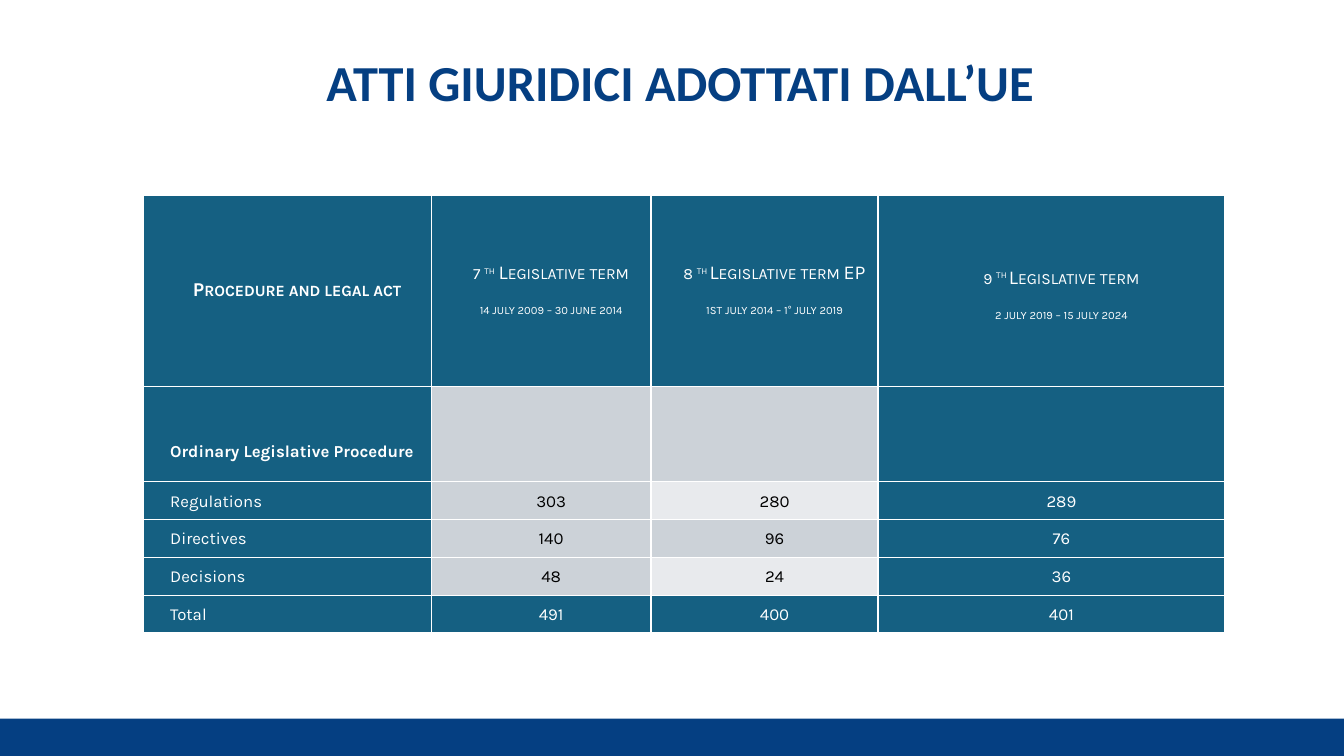
from lxml.etree import SubElement
from pptx import Presentation
from pptx.dml.color import RGBColor
from pptx.enum.shapes import MSO_SHAPE
from pptx.enum.text import MSO_ANCHOR, PP_ALIGN
from pptx.oxml.ns import qn
from pptx.util import Pt

NAVY = RGBColor(0x05, 0x3F, 0x82)
TEAL = RGBColor(0x15, 0x60, 0x82)
GREY = RGBColor(0xCC, 0xD2, 0xD8)
PALE = RGBColor(0xE8, 0xEA, 0xED)
WHITE = RGBColor(0xFF, 0xFF, 0xFF)
BLACK = RGBColor(0, 0, 0)

COLUMN_WIDTHS = (205.8, 157, 162.2, 247.6)
ROW_HEIGHTS = (136.6, 67.9, 27, 27, 27, 27)
TERMS = (
    ("7 ", "th", " Legislative term", "14 july 2009 – 30 june 2014", 0),
    ("8 ", "th ", "Legislative term EP", "1st july 2014 – 1° july 2019", 0),
    ("9 ", "th ", "Legislative term", "2 july 2019 – 15 july 2024", 6),
)
ACTS = (
    ("Regulations", 303, 280, 289),
    ("Directives", 140, 96, 76),
    ("Decisions", 48, 24, 36),
    ("Total", 491, 400, 401),
)


class SlideBuilder:
    title_font = "Calibri"
    table_font = "Karla"

    def __init__(self, slide):
        self.slide = slide

    def bar(self, left, top, width, height, color):
        bar = self.slide.shapes.add_shape(
            MSO_SHAPE.RECTANGLE, Pt(left), Pt(top), Pt(width), Pt(height))
        bar.shadow.inherit = False
        bar.fill.solid()
        bar.fill.fore_color.rgb = color
        bar.line.fill.background()

    def title(self, text, left, top, width, height):
        frame = self.slide.shapes.add_textbox(
            Pt(left), Pt(top), Pt(width), Pt(height)).text_frame
        frame.word_wrap = True
        frame.vertical_anchor = MSO_ANCHOR.MIDDLE
        heading = frame.paragraphs[0]
        heading.text = text
        heading.alignment = PP_ALIGN.CENTER
        heading.line_spacing = 0.9
        self.style(heading, self.title_font, 36, NAVY, True)

    def table(self, left, top, widths, heights):
        table = self.slide.shapes.add_table(
            len(heights), len(widths), Pt(left), Pt(top),
            Pt(sum(widths)), Pt(sum(heights))).table
        table.first_row = table.horz_banding = False
        for column, width in zip(table.columns, widths):
            column.width = Pt(width)
        for row, height in zip(table.rows, heights):
            row.height = Pt(height)
        return table

    def cell(self, cell, color, top_inset=0):
        cell.vertical_anchor = MSO_ANCHOR.MIDDLE
        cell.margin_left = cell.margin_right = Pt(5)
        cell.margin_top, cell.margin_bottom = Pt(top_inset), 0
        properties = cell._tc.get_or_add_tcPr()
        for side in ("a:lnL", "a:lnR", "a:lnT", "a:lnB"):
            border = SubElement(properties, qn(side), w=str(Pt(1)))
            fill = SubElement(border, qn("a:solidFill"))
            SubElement(fill, qn("a:srgbClr"), val=str(WHITE))
        cell.fill.solid()
        cell.fill.fore_color.rgb = color

    def paragraph(self, paragraph, parts, size=12, color=WHITE, bold=False,
                  align=PP_ALIGN.CENTER, small_caps=False):
        for part in parts:
            run = paragraph.add_run()
            run.text = part
            if part.strip() == "th":
                run.font._element.set("baseline", "30000")
        paragraph.alignment = align
        paragraph.line_spacing = Pt(15)
        paragraph._p.get_or_add_pPr().set("indent", str(Pt(14.4)))
        self.style(paragraph, self.table_font, size, color, bold)
        if small_caps:
            paragraph.font._element.set("cap", "small")

    def style(self, paragraph, name, size, color, bold):
        font = paragraph.font
        font.name, font.size, font.bold = name, Pt(size), bold
        font.color.rgb = color


def main():
    deck = Presentation()
    deck.slide_width, deck.slide_height = Pt(960), Pt(540)
    builder = SlideBuilder(deck.slides.add_slide(deck.slide_layouts[6]))
    builder.bar(0, 513.4, 960, 26.6, NAVY)
    builder.title("ATTI GIURIDICI ADOTTATI DALL’UE", 72, 8.6, 828, 104.4)
    acts_table = builder.table(102.2, 139.7, COLUMN_WIDTHS, ROW_HEIGHTS)

    procedure = acts_table.cell(0, 0)
    builder.cell(procedure, TEAL)
    builder.paragraph(procedure.text_frame.paragraphs[0],
                      ["Procedure and legal act"], 14, bold=True, small_caps=True)
    for column, (*term, dates, inset) in enumerate(TERMS, 1):
        heading = acts_table.cell(0, column)
        builder.cell(heading, TEAL, inset)
        builder.paragraph(heading.text_frame.paragraphs[0], term, 14, small_caps=True)
        period = heading.text_frame.add_paragraph()
        builder.paragraph(period, [dates], 10, small_caps=True)
        period.space_before = Pt(9)

    for column, color in enumerate((TEAL, GREY, GREY, TEAL)):
        builder.cell(acts_table.cell(1, column), color, 0 if column else 24)
    builder.paragraph(acts_table.cell(1, 0).text_frame.paragraphs[0],
                      ["Ordinary Legislative Procedure"], bold=True,
                      align=PP_ALIGN.LEFT)

    for row, act in enumerate(ACTS, 2):
        for column, value in enumerate(act):
            shaded = column in (1, 2) and act[0] != "Total"
            light = PALE if column == 2 and row % 2 == 0 else GREY
            entry = acts_table.cell(row, column)
            builder.cell(entry, light if shaded else TEAL)
            builder.paragraph(entry.text_frame.paragraphs[0], [str(value)],
                              color=BLACK if shaded else WHITE,
                              align=PP_ALIGN.CENTER if column else PP_ALIGN.LEFT)

    deck.save("out.pptx")


if __name__ == "__main__":
    main()
